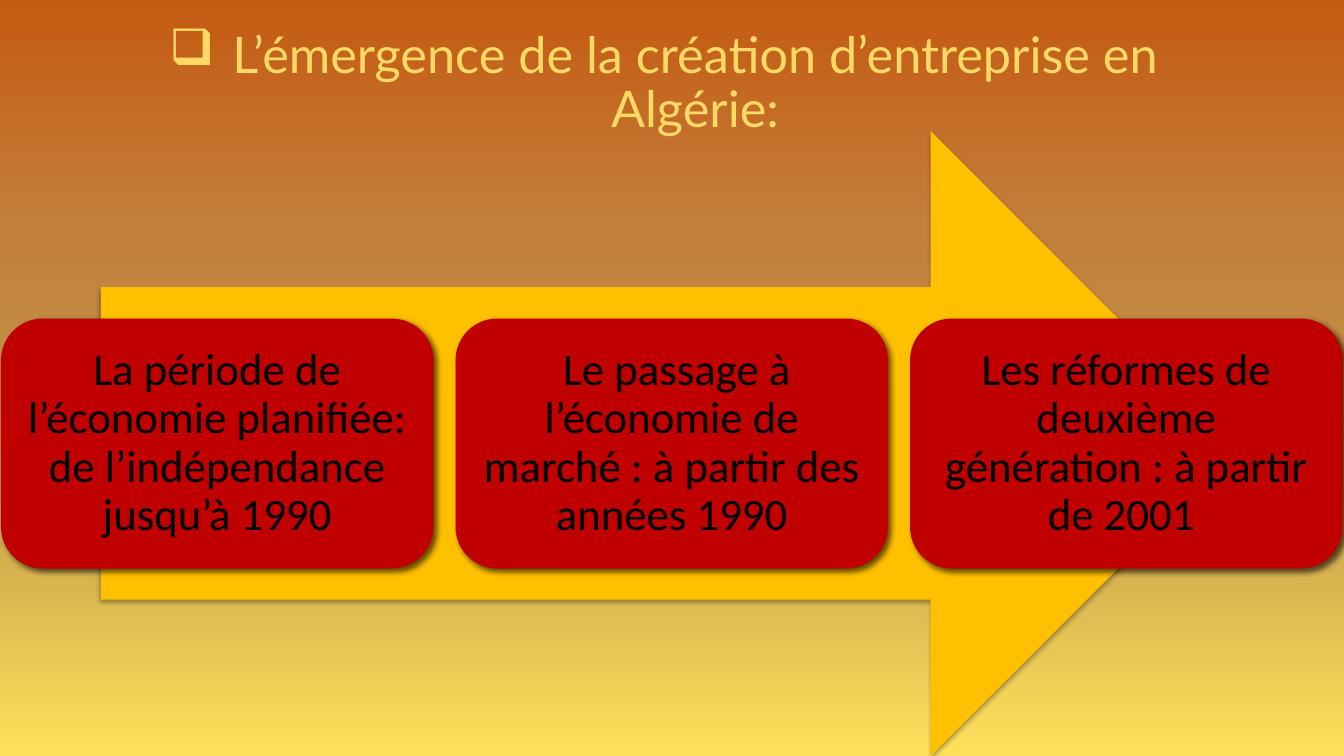
"""Build the slide on the rise of business creation in Algeria."""
from dataclasses import dataclass

from lxml.etree import SubElement
from pptx import Presentation
from pptx.dml.color import RGBColor
from pptx.enum.shapes import MSO_SHAPE
from pptx.enum.text import MSO_ANCHOR, PP_ALIGN
from pptx.oxml.ns import qn
from pptx.shapes.autoshape import Shape
from pptx.slide import Slide
from pptx.util import Pt


@dataclass(frozen=True)
class Box:
    left: float
    top: float
    width: float
    height: float


@dataclass(frozen=True)
class Shadow:
    alpha: int
    blur: float
    dist: float
    angle: int


BACKGROUND = [(0, "C55A11"), (30, "C27F3C"), (63, "C29A4A"), (100, "FFE05B")]
PERIODS = [
    "La période de l’économie planifiée: de l’indépendance jusqu’à 1990",
    " Le passage à l’économie de marché : à partir des années 1990",
    "Les réformes de deuxième génération : à partir de 2001 ",
]
PERIOD_LEFT = 0.7
PERIOD_STEP = 324.65
ARROW_SHADOW = Shadow(32, 3.5, 2.2, 90)
PERIOD_SHADOW = Shadow(60, 4, 3, 45)


def rgb(color: str) -> RGBColor:
    return RGBColor.from_string(color)


def set_background(s: Slide) -> None:
    fill = s.background.fill
    fill.gradient()
    fill.gradient_angle = 270
    stops = next(s.element.iter(qn("a:gsLst")))
    for stop in list(stops):
        stops.remove(stop)
    for pos, color in BACKGROUND:
        stop = SubElement(stops, qn("a:gs"), pos=str(pos * 1000))
        SubElement(stop, qn("a:srgbClr"), val=color)


def add_block(s: Slide, kind: MSO_SHAPE, box: Box, color: str, shadow: Shadow) -> Shape:
    sp = s.shapes.add_shape(kind, Pt(box.left), Pt(box.top), Pt(box.width), Pt(box.height))
    sp.fill.solid()
    sp.fill.fore_color.rgb = rgb(color)
    sp.line.fill.background()
    sp.shadow.inherit = False
    effects = sp.element.spPr.find(qn("a:effectLst"))
    outer = SubElement(effects, qn("a:outerShdw"), blurRad=str(Pt(shadow.blur)),
                       dist=str(Pt(shadow.dist)), dir=str(shadow.angle * 60000),
                       algn="ctr", rotWithShape="0")
    black = SubElement(outer, qn("a:srgbClr"), val="000000")
    SubElement(black, qn("a:alpha"), val=str(shadow.alpha * 1000))
    return sp


def write(sp: Shape, text: str, *, size: float, font: str, color: str,
          inset: float | None = None, bullet: str = "", indent: float = 0) -> None:
    tf = sp.text_frame
    tf.word_wrap = True
    tf.vertical_anchor = MSO_ANCHOR.MIDDLE
    if inset is not None:
        tf.margin_left = tf.margin_right = tf.margin_top = tf.margin_bottom = Pt(inset)
    p = tf.paragraphs[0]
    p.alignment = PP_ALIGN.CENTER
    p.line_spacing = 0.9
    if bullet:
        props = p._p.get_or_add_pPr()
        props.set("marL", str(Pt(indent)))
        props.set("indent", str(-Pt(indent)))
        SubElement(props, qn("a:buChar"), char=bullet)
    r = p.add_run()
    r.text = text
    r.font.size = Pt(size)
    r.font.name = font
    r.font.color.rgb = rgb(color)


def main() -> None:
    prs = Presentation()
    prs.slide_width, prs.slide_height = Pt(960), Pt(540)
    s = prs.slides.add_slide(prs.slide_layouts[6])
    set_background(s)
    title = s.shapes.add_textbox(Pt(60), Pt(26.6), Pt(828), Pt(67))
    write(title, "L’émergence de la création d’entreprise en Algérie:",
          size=36, font="Lato", color="FFD966", bullet="❑", indent=45)
    add_block(s, MSO_SHAPE.RIGHT_ARROW, Box(72, 93.6, 816, 446.4), "FFC000", ARROW_SHADOW)
    for i, period in enumerate(PERIODS):
        box = Box(PERIOD_LEFT + i * PERIOD_STEP, 227.5, 309, 178.6)
        sp = add_block(s, MSO_SHAPE.ROUNDED_RECTANGLE, box, "C00000", PERIOD_SHADOW)
        write(sp, period, size=32, font="Calibri", color="000000", inset=9.6)
    prs.save("out.pptx")


if __name__ == "__main__":
    main()
